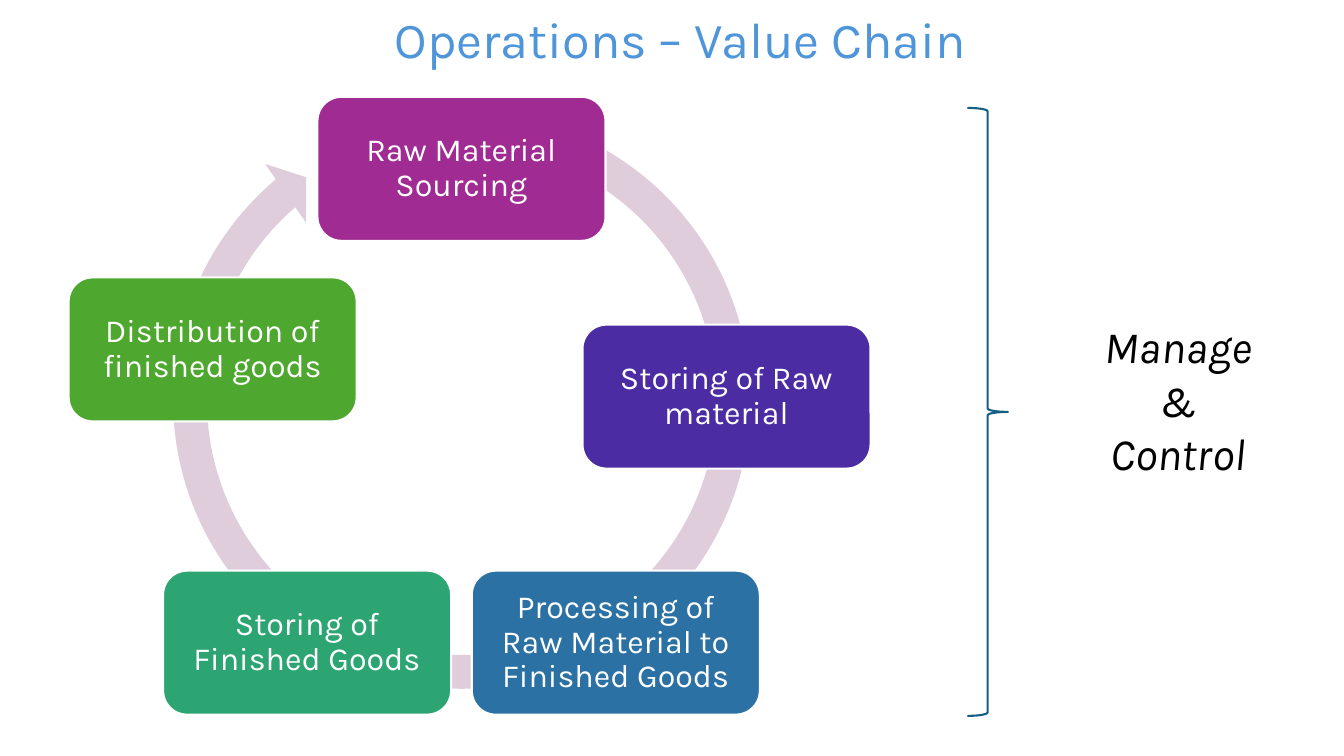
from pptx import Presentation
from pptx.dml.color import RGBColor
from pptx.enum import shapes, text
from pptx.util import Cm, Pt

COLORS = {
    "title": "4E95D9", "ring": "DFCDDC", "brace": "156082",
    "white": "FFFFFF", "black": "000000",
    "purple": "A02B93", "indigo": "4B2CA2", "blue": "2C71A4",
    "teal": "2DA573", "green": "4EA72E",
}
STAGE_W, STAGE_H = Cm(7.26), Cm(3.63)
STAGES = [
    ("Raw Material Sourcing", "purple", 8.0, 2.44),
    ("Storing of Raw material", "indigo", 14.68, 8.18),
    ("Processing of Raw Material to Finished Goods", "blue", 11.89, 14.38),
    ("Storing of Finished Goods", "teal", 4.11, 14.38),
    ("Distribution of finished goods", "green", 1.73, 6.99),
]


def rgb(name):
    return RGBColor.from_string(COLORS[name])


def style_text(tf, size, color, align, italic=None):
    """Wrap the frame and give all its paragraphs one look."""
    tf.word_wrap = True
    tf.auto_size = text.MSO_AUTO_SIZE.NONE
    for p in tf.paragraphs:
        p.alignment = align
        for r in p.runs:
            r.font.name = "Karla"
            r.font.size = Pt(size)
            r.font.italic = italic
            r.font.color.rgb = rgb(color)


prs = Presentation()
prs.slide_width, prs.slide_height = Cm(33.87), Cm(19.05)
s = prs.slides.add_slide(prs.slide_layouts[5])

# Title
title = s.shapes.title
title.left, title.top, title.width, title.height = Cm(9.7), Cm(0.08), Cm(24.1), Cm(1.8)
title.text_frame.text = "Operations – Value Chain"
title.text_frame.vertical_anchor = text.MSO_ANCHOR.TOP
style_text(title.text_frame, 36, "title", text.PP_ALIGN.LEFT)

# Cycle arrow behind the stages
ring = s.shapes.add_shape(shapes.MSO_SHAPE.CIRCULAR_ARROW,
                          Cm(3.89), Cm(2.34), Cm(15.49), Cm(15.49))
for i, value in enumerate((0.055, 3.307, 137.761, 173.859, 0.058)):
    ring.adjustments[i] = value
ring.fill.solid()
ring.fill.fore_color.rgb = rgb("ring")
ring.line.fill.background()
ring.shadow.inherit = False

# Stages of the value chain
for label, color, x, y in STAGES:
    sp = s.shapes.add_shape(shapes.MSO_SHAPE.ROUNDED_RECTANGLE,
                            Cm(x), Cm(y), STAGE_W, STAGE_H)
    sp.shadow.inherit = False
    sp.fill.solid()
    sp.fill.fore_color.rgb = rgb(color)
    sp.line.color.rgb = rgb("white")
    sp.line.width = Pt(1.5)
    tf = sp.text_frame
    tf.text = label
    tf.vertical_anchor = text.MSO_ANCHOR.MIDDLE
    tf.margin_left = tf.margin_right = Cm(0.25)
    tf.paragraphs[0].line_spacing = 0.9
    style_text(tf, 23, "white", text.PP_ALIGN.CENTER)

# Brace and what it stands for
brace = s.shapes.add_shape(shapes.MSO_SHAPE.RIGHT_BRACE,
                           Cm(24.38), Cm(2.72), Cm(1.02), Cm(15.32))
brace.shadow.inherit = False
brace.fill.background()
brace.line.color.rgb = rgb("brace")
brace.line.width = Pt(1.5)

control = s.shapes.add_textbox(Cm(27.36), Cm(7.9), Cm(4.67), Cm(4.37))
control.text_frame.text = "Manage\n&\nControl"
style_text(control.text_frame, 32, "black", text.PP_ALIGN.CENTER, italic=True)

prs.save("out.pptx")
